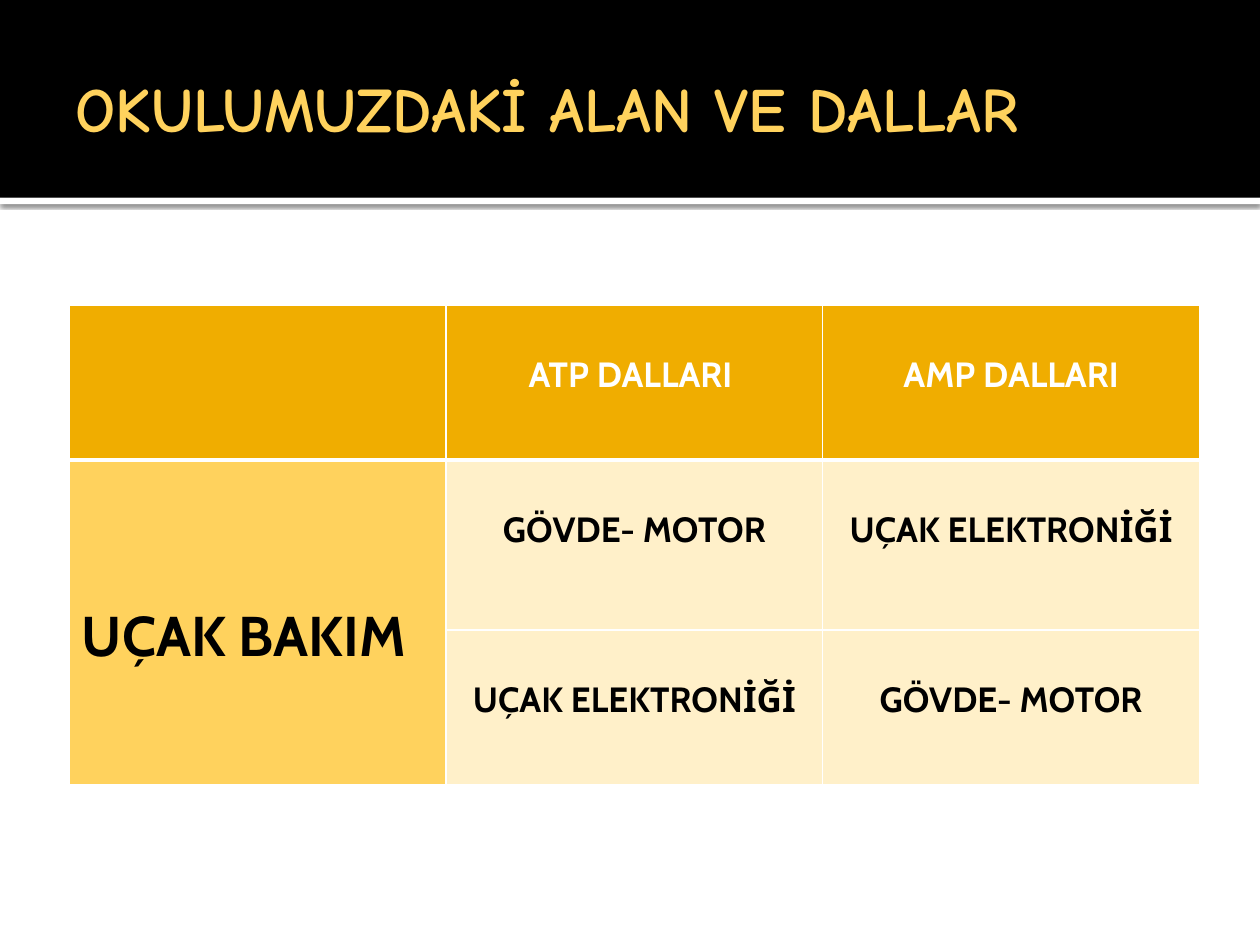
from dataclasses import dataclass

from lxml import etree
from pptx import Presentation
from pptx.dml.color import RGBColor
from pptx.enum.shapes import MSO_SHAPE
from pptx.enum.text import MSO_ANCHOR, PP_ALIGN
from pptx.oxml import parse_xml
from pptx.oxml.ns import nsdecls, qn
from pptx.util import Inches, Pt

RECTANGLE = MSO_SHAPE.RECTANGLE
MIDDLE = MSO_ANCHOR.MIDDLE
LEFT, CENTER = PP_ALIGN.LEFT, PP_ALIGN.CENTER


@dataclass(frozen=True)
class Theme:
    black: str = "000000"
    white: str = "FFFFFF"
    header: str = "F0AD00"
    accent: str = "FFD25D"
    pale: str = "FFF0C9"
    title_font: str = "Comic Neue"
    body_font: str = "Cabin"
    title_size: int = 36
    field_size: int = 32
    cell_size: int = 20


class SlideBuilder:
    def __init__(self, slide, theme):
        self.slide = slide
        self.theme = theme

    def style_text(self, frame, text, font, size, color, align=LEFT):
        frame.text = text
        para = frame.paragraphs[0]
        para.alignment = align
        for span in para.runs:
            span.font.name = font
            span.font.size = Pt(size)
            span.font.bold = True
            span.font.color.rgb = RGBColor.from_string(color)

    def band(self, top, height, color):
        box = self.slide.shapes.add_shape(
            RECTANGLE, 0, Inches(top), Inches(10), Inches(height))
        box.shadow.inherit = False
        box.fill.solid()
        box.fill.fore_color.rgb = RGBColor.from_string(color)
        box.line.fill.background()
        return box

    def drop_shadow(self, box):
        effects = box._element.spPr.find(qn("a:effectLst"))
        effects.append(parse_xml(
            f'<a:outerShdw {nsdecls("a")} blurRad="{Pt(2.5)}" dist="{Pt(0.8)}" '
            'dir="5400000" algn="tl" rotWithShape="0">'
            f'<a:srgbClr val="{self.theme.black}"><a:alpha val="60000"/></a:srgbClr>'
            '</a:outerShdw>'))

    def title(self, text):
        box = self.slide.shapes.add_textbox(
            Inches(0.5), Inches(0.17), Inches(9), Inches(1.37))
        frame = box.text_frame
        frame.word_wrap = True
        frame.vertical_anchor = MIDDLE
        frame.margin_right = Inches(0.05)
        self.style_text(frame, text, self.theme.title_font,
                        self.theme.title_size, self.theme.accent)

    def table(self, left, top, column_width, row_heights, column_count):
        frame = self.slide.shapes.add_table(
            len(row_heights), column_count, Inches(left), Inches(top),
            Inches(column_width * column_count), Inches(sum(row_heights)))
        for column in frame.table.columns:
            column.width = Inches(column_width)
        for row, height in zip(frame.table.rows, row_heights):
            row.height = Inches(height)
        return frame.table

    def cell(self, cell, text, fill, color, size, margin_top, align=CENTER):
        cell.margin_top = Inches(margin_top)
        if text:
            self.style_text(cell.text_frame, text, self.theme.body_font,
                            size, color, align)
        cell.fill.solid()
        cell.fill.fore_color.rgb = RGBColor.from_string(fill)

    def borders(self, cell, bottom_width=1):
        properties = cell._tc.get_or_add_tcPr()
        widths = {"lnL": 1, "lnR": 1, "lnT": 1, "lnB": bottom_width}
        for index, (side, width) in enumerate(widths.items()):
            line = etree.Element(qn(f"a:{side}"), w=str(Pt(width)))
            solid = etree.SubElement(line, qn("a:solidFill"))
            etree.SubElement(solid, qn("a:srgbClr"), val=self.theme.white)
            properties.insert(index, line)


def main():
    theme = Theme()
    deck = Presentation()
    deck.slide_width, deck.slide_height = Inches(10), Inches(7.5)
    page = SlideBuilder(deck.slides.add_slide(deck.slide_layouts[6]), theme)

    # Title band with a shadowed white edge
    page.drop_shadow(page.band(1.57, 0.05, theme.white))
    page.band(0, 1.57, theme.black)
    page.title("OKULUMUZDAKİ ALAN VE DALLAR")

    # Table of branches, with the field name spanning both body rows
    rows = [
        ["", "ATP DALLARI ", "AMP DALLARI"],
        ["UÇAK BAKIM", "GÖVDE- MOTOR", "UÇAK ELEKTRONİĞİ"],
        ["", "UÇAK ELEKTRONİĞİ", "GÖVDE- MOTOR"],
    ]
    table = page.table(0.55, 2.42, 2.99, [1.23, 1.35, 1.23], len(rows[0]))
    table.cell(1, 0).merge(table.cell(2, 0))
    for row_index, texts in enumerate(rows):
        for column_index, text in enumerate(texts):
            cell = table.cell(row_index, column_index)
            if row_index == 0:
                page.cell(cell, text, theme.header, theme.white, theme.cell_size, 0.39)
            elif column_index == 0:
                page.cell(cell, text, theme.accent, theme.black,
                          theme.field_size, 1.13, LEFT)
            else:
                page.cell(cell, text, theme.pale, theme.black, theme.cell_size, 0.39)
            page.borders(cell, bottom_width=3 if row_index == 0 else 1)

    deck.save("out.pptx")


if __name__ == "__main__":
    main()
